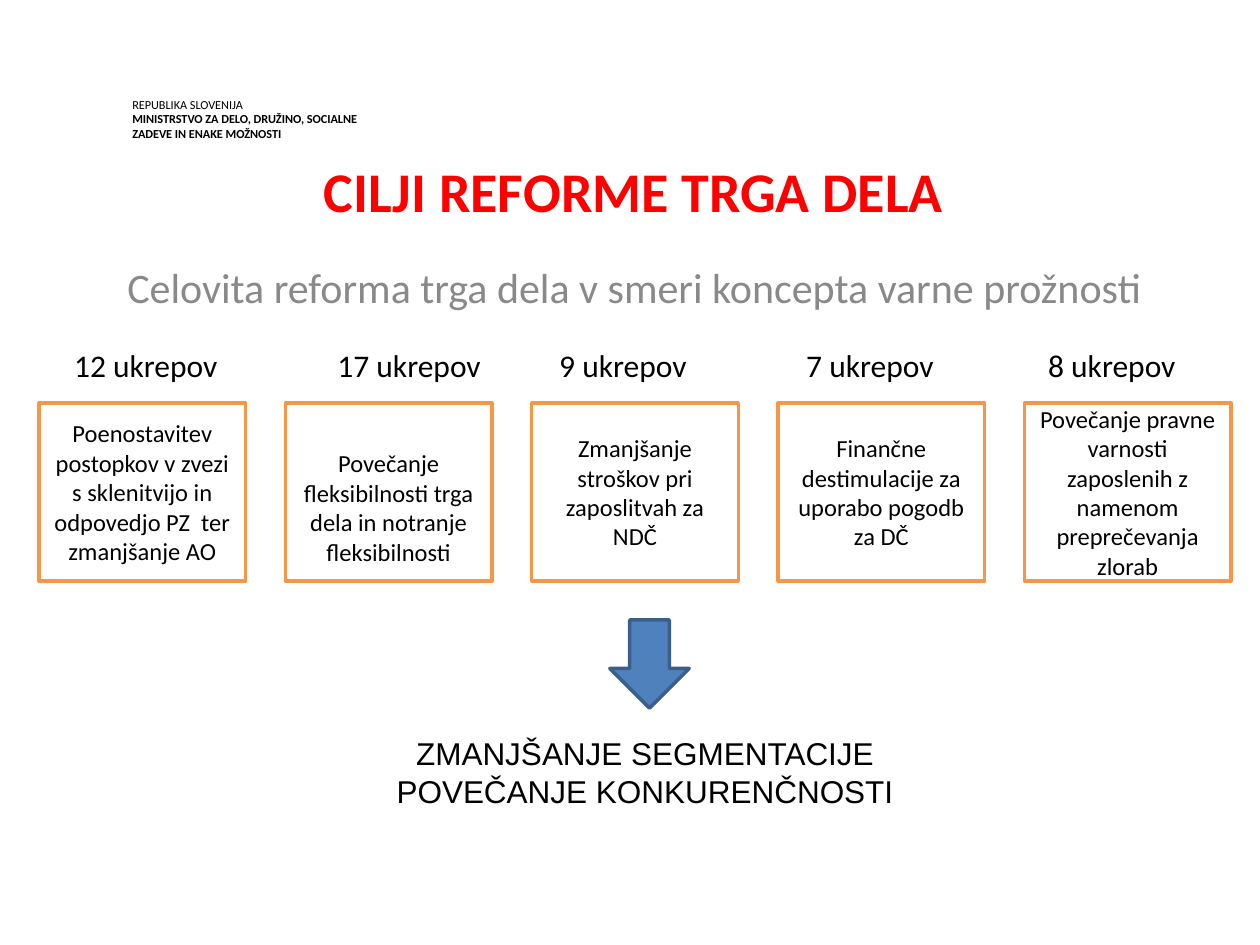
from pptx import Presentation
from pptx.dml.color import RGBColor
from pptx.enum.shapes import MSO_SHAPE as Shape
from pptx.enum.text import MSO_ANCHOR as Anchor, PP_ALIGN as Align
from pptx.util import Inches, Pt
from lxml import etree

ORANGE, BLUE, DARK_BLUE = "F79646", "4F81BD", "3A5F8C"
RED, GRAY, BLACK, WHITE = "FF0000", "898989", "000000", "FFFFFF"
DRAWING = "{http://schemas.openxmlformats.org/drawingml/2006/main}"

GOALS = [
    ["Poenostavitev postopkov v zvezi s sklenitvijo in odpovedjo PZ  ter zmanjšanje AO"],
    ["Povečanje fleksibilnosti trga dela in notranje fleksibilnosti"],
    ["Zmanjšanje stroškov pri zaposlitvah za", "NDČ"],
    ["Finančne destimulacije za uporabo pogodb za DČ"],
    ["Povečanje pravne varnosti zaposlenih z namenom preprečevanja zlorab"],
]
# Text of each measure count and its distance from the text edge
COUNTS = [("12 ukrepov", 0.26), ("17 ukrepov", 2.35), ("9 ukrepov", 4.11),
          ("7 ukrepov", 6.07), ("8 ukrepov", 7.99)]


def color(value):
    return RGBColor.from_string(value)


def add_span(para, text, size, fill=BLACK, bold=False, font="Calibri"):
    span = para.add_run()
    span.text = text
    span.font.size = Pt(size)
    span.font.name = font
    span.font.bold = bold
    span.font.color.rgb = color(fill)


def add_lines(frame, lines, size, align=Align.CENTER, **style):
    frame.word_wrap = True
    for number, line in enumerate(lines):
        para = frame.add_paragraph() if number else frame.paragraphs[0]
        para.alignment = align
        add_span(para, line, size, **style)


def add_text(page, left, top, width, height):
    box = page.shapes.add_textbox(Inches(left), Inches(top), Inches(width), Inches(height))
    box.text_frame.word_wrap = True
    return box.text_frame


def add_block(page, kind, left, top, width, height, fill, line):
    block = page.shapes.add_shape(kind, Inches(left), Inches(top), Inches(width), Inches(height))
    block.shadow.inherit = False
    block.fill.solid()
    block.fill.fore_color.rgb = color(fill)
    block.line.color.rgb = color(line)
    block.line.width = Pt(2)
    return block


def add_ministry(page, left, top, width, height):
    frame = add_text(page, left, top, width, height)
    frame.margin_left = frame.margin_right = frame.margin_top = frame.margin_bottom = 0
    add_lines(frame, ["REPUBLIKA SLOVENIJA"], 7, Align.LEFT)
    para = frame.add_paragraph()
    add_span(para, "MINISTRSTVO ZA DELO, DRUŽINO, SOCIALNE ZADEVE IN ENAKE MOŽNOSTI", 7, bold=True)
    for para in frame.paragraphs:
        para.line_spacing = Pt(8.4)


def add_headings(page, left, top, width, height):
    title = add_text(page, left + 0.55, top, 8.5, height)
    title.vertical_anchor = Anchor.MIDDLE
    add_lines(title, ["CILJI REFORME TRGA DELA"], 32, fill=RED, bold=True)
    subtitle = add_text(page, left, top + 1.33, width, 0.5)
    add_lines(subtitle, ["Celovita reforma trga dela v smeri koncepta varne prožnosti"], 24, fill=GRAY)


def add_counts(page, left, top, width, height):
    para = add_text(page, left, top, width, height).paragraphs[0]
    tabs = etree.SubElement(para._p.get_or_add_pPr(), DRAWING + "tabLst")
    for text, stop in COUNTS:
        etree.SubElement(tabs, DRAWING + "tab", pos=str(Inches(stop)), algn="l")
        add_span(para, "\t" + text, 18)


def add_goals(page, left, top, width, height):
    box_width = 1.64
    step = (width - box_width) / (len(GOALS) - 1)
    for number, lines in enumerate(GOALS):
        box = add_block(page, Shape.RECTANGLE, left + number * step, top,
                        box_width, height, WHITE, ORANGE)
        frame = box.text_frame
        frame.vertical_anchor = Anchor.MIDDLE
        # The second goal sits one text line lower
        if number == 1:
            frame.margin_top = Inches(0.29)
        add_lines(frame, lines, 14)


def add_outcome(page, left, top, width, height):
    add_block(page, Shape.DOWN_ARROW, left + 2.65, top, 0.63, 0.7, BLUE, DARK_BLUE)
    frame = add_text(page, left, top + 0.86, width, height - 0.86)
    add_lines(frame, ["ZMANJŠANJE SEGMENTACIJE", "POVEČANJE KONKURENČNOSTI"], 18, font="Arial")


def main():
    deck = Presentation()
    deck.slide_width, deck.slide_height = Inches(10), Inches(7.5)
    page = deck.slides.add_slide(deck.slide_layouts[6])
    add_ministry(page, 1.05, 0.77, 1.82, 0.34)
    add_headings(page, 0.23, 0.7, 9.61, 1.61)
    add_counts(page, 0.23, 2.7, 9.61, 0.4)
    add_goals(page, 0.31, 3.2, 9.46, 1.41)
    add_outcome(page, 2.19, 4.92, 5.86, 1.57)
    deck.save("out.pptx")


if __name__ == "__main__":
    main()
